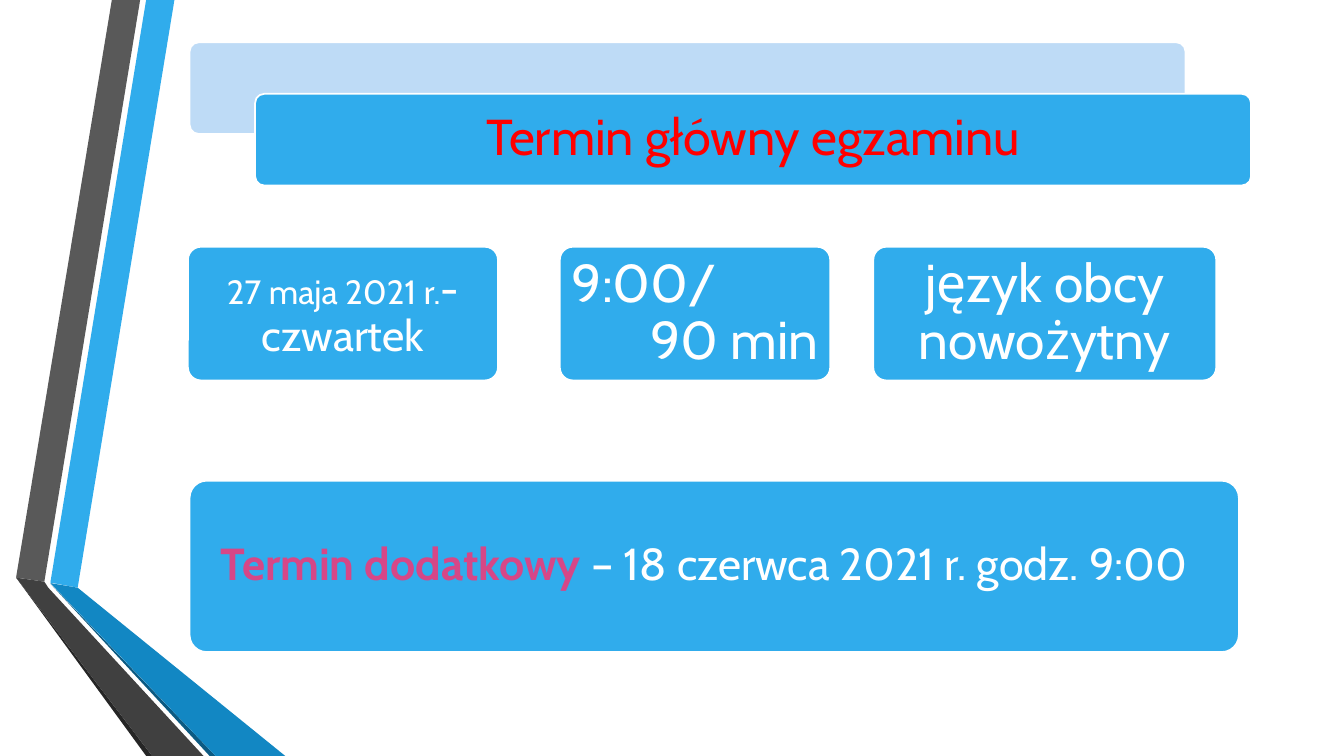
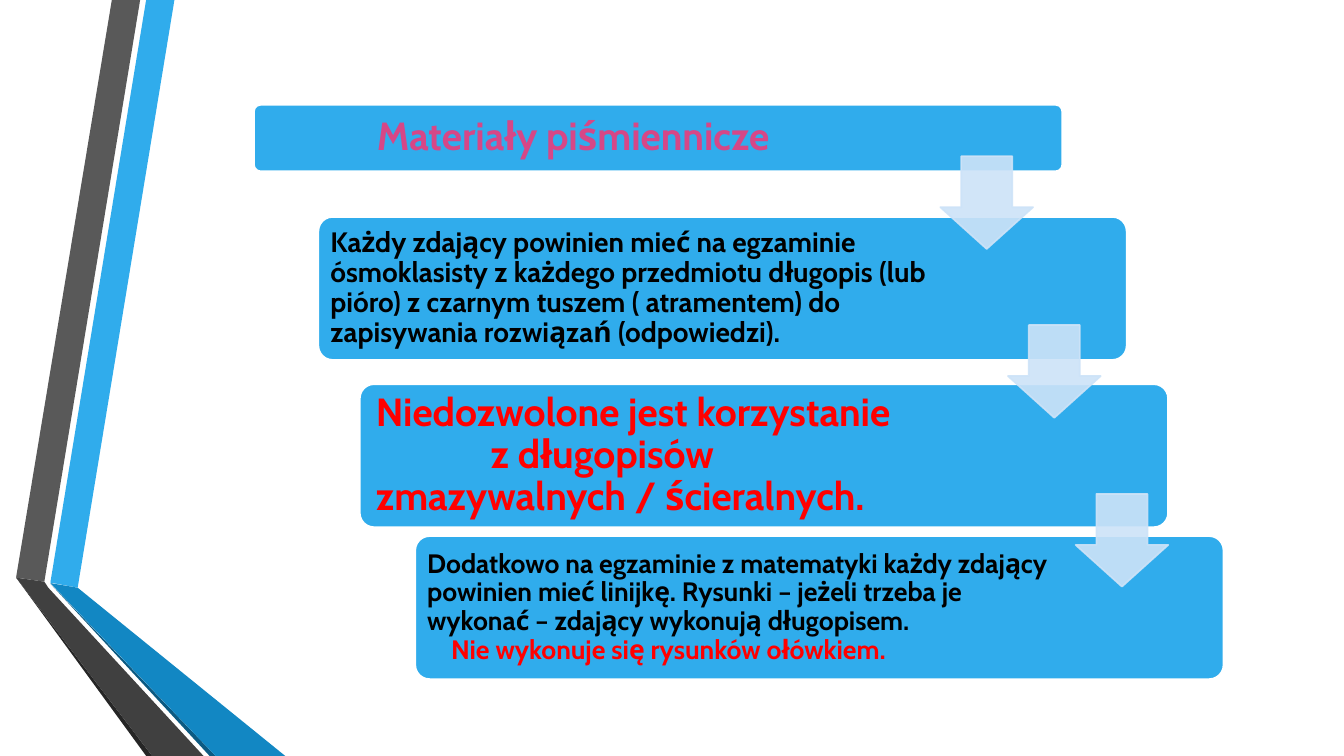
from lxml.etree import SubElement
from pptx import Presentation
from pptx.dml.color import RGBColor
from pptx.enum.shapes import MSO_SHAPE
from pptx.enum.text import MSO_ANCHOR, MSO_AUTO_SIZE, PP_ALIGN
from pptx.oxml import parse_xml
from pptx.oxml.ns import qn
from pptx.util import Pt

FONT = "Cabin"
WHITE = RGBColor(0xFF, 0xFF, 0xFF)
BLACK = RGBColor(0x00, 0x00, 0x00)
RED = RGBColor(0xFF, 0x00, 0x00)
PINK = RGBColor(0xD6, 0x47, 0x87)
BLUE = RGBColor(0x30, 0xAC, 0xEC)
PALE_BLUE = RGBColor(0xBE, 0xDB, 0xF6)
ARROW_BLUE = RGBColor(0xCD, 0xE3, 0xF8)
DEEP_BLUE = RGBColor(0x12, 0x87, 0xC3)
NAVY = RGBColor(0x0C, 0x5A, 0x82)
GREY = RGBColor(0x59, 0x59, 0x59)
CHARCOAL = RGBColor(0x40, 0x40, 0x40)
DARK = RGBColor(0x26, 0x26, 0x26)

RIBBONS = [
    (BLUE, [(36, 416.2), (55.5, 419.8), (124.6, 0), (104.4, 0)]),
    (GREY, [(100.1, 0), (79.9, 0), (11.5, 412.6), (31.7, 415.5)]),
    (DARK, [(11.5, 412.6), (104.4, 540), (108.7, 540)]),
    (NAVY, [(36, 416.9), (149.8, 540), (154.1, 540)]),
    (DEEP_BLUE, [(36, 416.5), (154.1, 540), (203.8, 540), (55.5, 419.8)]),
    (CHARCOAL, [(145.4, 540), (34.5, 419.8), (31.7, 415.5), (11.5, 412.6), (108.7, 540)]),
]

TEXT_OUTLINE = (
    '<a:ln xmlns:a="http://schemas.openxmlformats.org/drawingml/2006/main" w="9525">'
    '<a:solidFill><a:srgbClr val="FFFFFF"/></a:solidFill></a:ln>'
)


def add_span(para, text, size, color=WHITE, bold=False, outlined=False):
    span = para.add_run()
    span.text = text
    font = span.font
    font.name, font.size, font.bold = FONT, Pt(size), bold
    font.color.rgb = color
    if outlined:
        span.element.get_or_add_rPr().insert(0, parse_xml(TEXT_OUTLINE)) if hasattr(span, "element") else \
            font.fill and span._r.get_or_add_rPr().insert(0, parse_xml(TEXT_OUTLINE))


def write(box, paragraphs, align=PP_ALIGN.CENTER, left=4, right=4, vertical=1):
    frame = box.text_frame
    frame.word_wrap = True
    frame.auto_size = MSO_AUTO_SIZE.NONE
    frame.vertical_anchor = MSO_ANCHOR.MIDDLE
    frame.margin_left, frame.margin_right = Pt(left), Pt(right)
    frame.margin_top = frame.margin_bottom = Pt(vertical)
    for index, (spans, options) in enumerate(paragraphs):
        para = frame.add_paragraph() if index else frame.paragraphs[0]
        para.alignment = options.get("align", align)
        para.line_spacing = 0.9
        para.space_before = para.space_after = Pt(0)
        if "indent" in options:
            para._p.get_or_add_pPr().set("marL", str(Pt(options["indent"])))
        for text, style in spans:
            add_span(para, text, **style)


def add_panel(page, left, top, width, height, fill=BLUE, line=1.25):
    panel = page.shapes.add_shape(
        MSO_SHAPE.ROUNDED_RECTANGLE, Pt(left), Pt(top), Pt(width), Pt(height))
    panel.adjustments[0] = 0.1
    panel.shadow.inherit = False
    panel.fill.solid()
    panel.fill.fore_color.rgb = fill
    panel.line.color.rgb = WHITE
    panel.line.width = Pt(line)
    return panel


def add_title(page, text, left, top, width, height, **style):
    title = page.shapes.title
    title.left, title.top, title.width, title.height = Pt(left), Pt(top), Pt(width), Pt(height)
    page.shapes.element.append(title.element)
    write(title, [([(text, style)], {})])


def add_down_arrow(page, left, top, side):
    arrow = page.shapes.add_shape(MSO_SHAPE.DOWN_ARROW, Pt(left), Pt(top), Pt(side), Pt(side))
    arrow.adjustments[0], arrow.adjustments[1] = 0.55, 0.45
    arrow.shadow.inherit = False
    arrow.fill.solid()
    arrow.fill.fore_color.rgb = ARROW_BLUE
    arrow.line.color.rgb = ARROW_BLUE
    arrow.line.width = Pt(1.25)
    for color in arrow.element.spPr.iter(qn("a:srgbClr")):
        SubElement(color, qn("a:alpha")).set("val", "90000")


def add_ribbons(page, layout):
    for holder in list(layout.placeholders):
        if holder.placeholder_format.idx:
            holder.element.getparent().remove(holder.element)
    group = page.shapes.add_group_shape()
    for color, points in RIBBONS:
        corners = [(Pt(x), Pt(y)) for x, y in points]
        builder = group.shapes.build_freeform(*corners[0], scale=1.0)
        builder.add_line_segments(corners[1:], close=True)
        ribbon = builder.convert_to_shape()
        ribbon.shadow.inherit = False
        ribbon.fill.solid()
        ribbon.fill.fore_color.rgb = color
        ribbon.line.fill.background()
    layout.shapes.element.append(group.element)


def add_exam_header(page, left, top, width, height):
    shift_x, shift_y = 46.8, 36.8
    add_panel(page, left, top, width, height, fill=PALE_BLUE)
    front = (left + shift_x, top + shift_y, width, height)
    add_panel(page, *front)
    add_title(page, "Termin główny egzaminu", *front, size=36, color=RED)


def add_exam_cards(page, top, height):
    large = {"size": 38}
    cards = [
        (134, 222, 3.6, [([("27 maja 2021 r.", {"size": 24}), ("- czwartek", {"size": 31})], {})]),
        (399.6, 193.7, 6, [([("9:00/", large)], {"align": PP_ALIGN.LEFT}),
                           ([("90 min", large)], {"align": PP_ALIGN.RIGHT})]),
        (623.5, 245.5, 6, [([("język obcy nowożytny", large)], {})]),
    ]
    for left, width, margin, paragraphs in cards:
        card = add_panel(page, left, top, width, height, line=1.75)
        write(card, paragraphs, left=margin, right=margin)


def add_extra_date(page, left, top, width, height):
    panel = add_panel(page, left, top, width, height)
    spans = [
        ("Termin dodatkowy ", {"size": 32, "color": PINK, "bold": True, "outlined": True}),
        ("– 18 czerwca 2021 r. godz. 9:00", {"size": 32}),
    ]
    write(panel, [(spans, {})], left=4, right=18)


def add_materials_steps(page, left, top, width):
    height = 102.2
    first = {"size": 20, "color": BLACK, "bold": True}
    warning = {"size": 28, "color": RED, "bold": True}
    last = {"size": 19, "color": BLACK, "bold": True}
    steps = [
        (46, 80, 5.6, 119, [
            ([("Każdy zdający powinien mieć na egzaminie ósmoklasisty z każdego przedmiotu "
               "długopis (lub pióro) z czarnym tuszem ( atramentem) do zapisywania rozwiązań "
               "(odpowiedzi).", first)], {})]),
        (75.6, 199.5, 8.5, 123, [
            ([("Niedozwolone jest korzystanie", warning)], {}),
            ([("z długopisów", warning)], {"indent": 82}),
            ([("zmazywalnych / ścieralnych.", warning)], {})]),
        (115.2, 308, 5.6, 120, [
            ([("Dodatkowo na egzaminie z matematyki każdy zdający powinien mieć linijkę. "
               "Rysunki – jeżeli trzeba je wykonać – zdający wykonują długopisem.", last)], {}),
            ([("Nie wykonuje się rysunków ołówkiem.", {**last, "color": RED})], {"indent": 17})]),
    ]
    add_panel(page, left, top, width, 47.5)
    add_title(page, "Materiały piśmiennicze", left, top, 456, 47.5,
              size=28, color=PINK, bold=True, outlined=True)
    for shift, drop, margin_left, margin_right, paragraphs in steps:
        panel = add_panel(page, left + shift, top + drop, width, height)
        write(panel, paragraphs, align=PP_ALIGN.LEFT, left=margin_left, right=margin_right)
    for index in range(len(steps)):
        add_down_arrow(page, left + 490.3 + 48.3 * index, top + 36.7 + 120.6 * index, 66.2)


def main():
    deck = Presentation()
    deck.slide_width, deck.slide_height = Pt(960), Pt(540)
    layout = deck.slide_layouts[5]
    exam_page = deck.slides.add_slide(layout)
    add_ribbons(exam_page, layout)
    add_exam_header(exam_page, 135.4, 30.2, 711.4, 65.5)
    add_exam_cards(exam_page, 176, 96)
    add_extra_date(exam_page, 135.4, 343.4, 749.5, 122.4)
    materials_page = deck.slides.add_slide(layout)
    add_materials_steps(materials_page, 181.4, 74.9, 577.4)
    deck.save("out.pptx")


if __name__ == "__main__":
    main()
